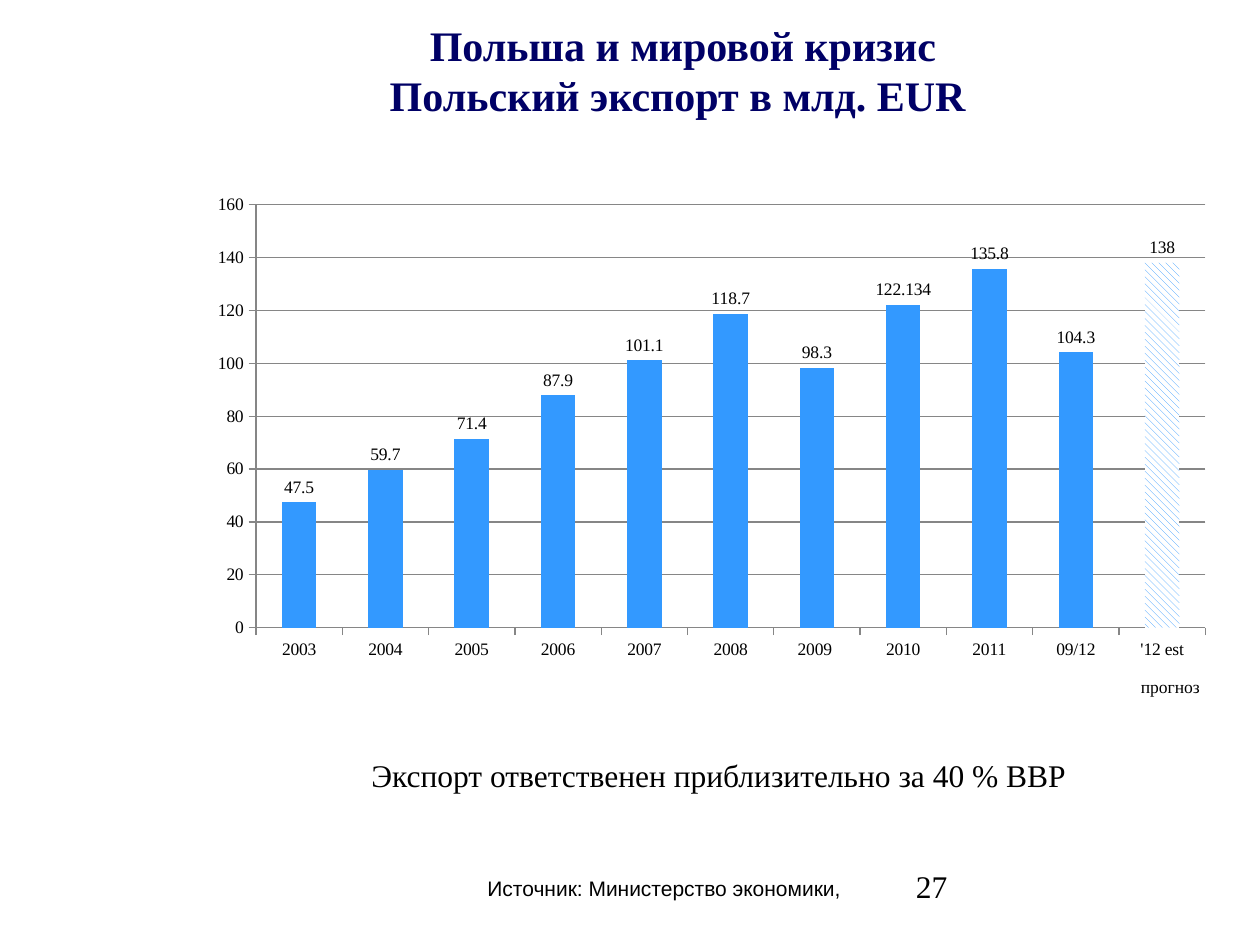
from lxml import etree
from pptx import Presentation
from pptx import util as u
from pptx.chart.data import CategoryChartData
from pptx.dml.color import RGBColor
from pptx.enum import chart as charts, dml, text
from pptx.oxml import ns

NAVY = RGBColor(0x00, 0x00, 0x66)
BLACK = RGBColor(0x00, 0x00, 0x00)
WHITE = RGBColor(0xFF, 0xFF, 0xFF)
BLUE = RGBColor(0x33, 0x99, 0xFF)
GRAY = RGBColor(0x86, 0x86, 0x86)
SERIF = "Times New Roman"

EXPORTS = {
    "2003": 47.5, "2004": 59.7, "2005": 71.4, "2006": 87.9,
    "2007": 101.1, "2008": 118.7, "2009 ": 98.3, "2010": 122.134,
    "2011": 135.8, "09/12": 104.3, "'12 est": 138,
}


def write_text(para, content, font=SERIF, size=18, color=BLACK, bold=False,
               align=text.PP_ALIGN.CENTER, spacing=None):
    para.text = content
    para.alignment = align
    if spacing:
        para.line_spacing = u.Pt(spacing)
    for span in para.runs:
        span.font.name = font
        span.font.size = u.Pt(size)
        span.font.bold = bold
        span.font.color.rgb = color


class SlideBuilder:
    def __init__(self, page, font=SERIF):
        self.page = page
        self.font = font

    def add_text(self, bounds, content, wrap=True, **style):
        box = self.page.shapes.add_textbox(*map(u.Inches, bounds))
        box.text_frame.word_wrap = wrap
        write_text(box.text_frame.paragraphs[0], content, **style)

    def add_columns(self, bounds, values, forecast):
        data = CategoryChartData()
        data.categories = list(values)
        data.add_series("Series 1", list(values.values()))
        frame = self.page.shapes.add_chart(
            charts.XL_CHART_TYPE.COLUMN_CLUSTERED,
            *map(u.Inches, bounds), data)
        chart = frame.chart
        chart.has_legend = False
        chart.has_title = False
        chart.font.name = self.font
        chart.font.size = u.Pt(10)
        chart.font.color.rgb = BLACK

        for axis in (chart.category_axis, chart.value_axis):
            axis.major_tick_mark = charts.XL_TICK_MARK.OUTSIDE
            axis.minor_tick_mark = charts.XL_TICK_MARK.NONE
            axis.format.line.color.rgb = GRAY
        axis = chart.value_axis
        axis.minimum_scale, axis.maximum_scale, axis.major_unit = 0, 160, 20
        axis.has_major_gridlines = True
        axis.major_gridlines.format.line.color.rgb = GRAY

        plot = chart.plots[0]
        plot.gap_width = 150
        plot.vary_by_categories = False
        plot.has_data_labels = True
        labels = plot.data_labels
        labels.show_value = True
        labels.position = charts.XL_LABEL_POSITION.OUTSIDE_END
        labels.number_format = "General"
        labels.number_format_is_linked = False

        series = plot.series[0]
        series.format.fill.solid()
        series.format.fill.fore_color.rgb = BLUE
        hatch = series.points[forecast].format.fill
        hatch.patterned()
        hatch.pattern = dml.MSO_PATTERN.WIDE_DOWNWARD_DIAGONAL
        hatch.fore_color.rgb = BLUE
        hatch.back_color.rgb = WHITE
        self.place_plot(chart, x=0.06, y=0.04, w=0.92, h=0.87)

    def place_plot(self, chart, **fractions):
        area = chart.element.find(".//" + ns.qn("c:plotArea"))
        layout = area.find(ns.qn("c:layout"))
        if layout is None:
            layout = etree.Element(ns.qn("c:layout"))
            area.insert(0, layout)
        manual = etree.SubElement(layout, ns.qn("c:manualLayout"))
        settings = {"layoutTarget": "inner", "xMode": "edge",
                    "yMode": "edge", **fractions}
        for name, value in settings.items():
            etree.SubElement(manual, ns.qn("c:" + name), val=str(value))


def main():
    deck = Presentation()
    deck.slide_width, deck.slide_height = u.Inches(10), u.Inches(7.5)
    builder = SlideBuilder(deck.slides.add_slide(deck.slide_layouts[6]))
    builder.add_text((7.17, 6.83, 2.08, 0.5), "27",
                     align=text.PP_ALIGN.LEFT)
    builder.add_text((1.17, 0.1, 8.5, 1.25),
                     "Польша и мировой кризис\vПольский экспорт в млд. EUR ",
                     size=24, color=NAVY, bold=True, spacing=29)
    builder.add_text((2.32, 5.95, 6.77, 0.91),
                     "Экспорт ответственен приблизительно за 40 % BBP")
    builder.add_text((3.66, 6.9, 3.27, 0.6),
                     "Источник: Министерство экономики, ",
                     font="Arial", size=12)
    builder.add_text((8.94, 5.32, 0.68, 0.27), "прогноз", wrap=False,
                     size=10, align=text.PP_ALIGN.RIGHT)
    builder.add_columns((1.54, 1.47, 8.19, 3.86), EXPORTS,
                        forecast=len(EXPORTS) - 1)
    deck.save("out.pptx")


if __name__ == "__main__":
    main()
